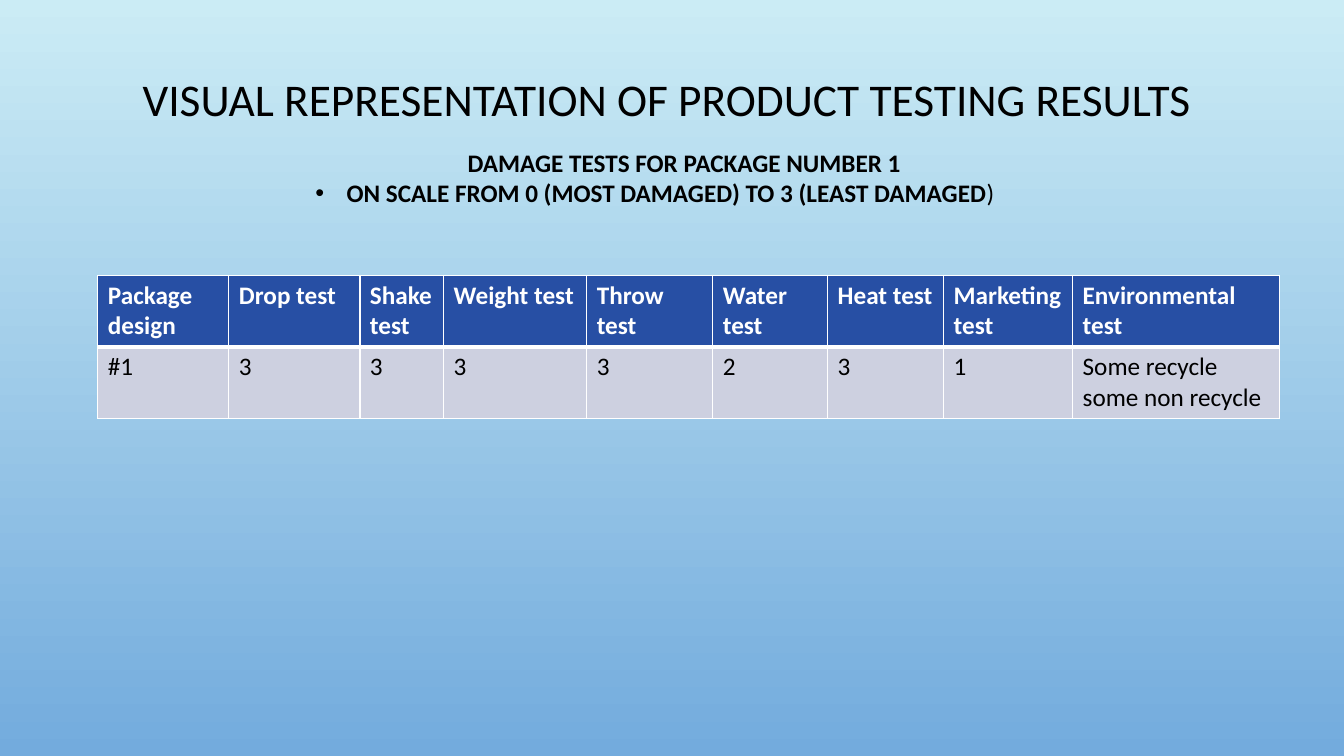
from dataclasses import dataclass

from lxml.etree import SubElement
from pptx import Presentation
from pptx.dml.color import RGBColor
from pptx.enum.text import MSO_ANCHOR as Anchor, MSO_AUTO_SIZE as AutoSize, PP_ALIGN as Align
from pptx.oxml.ns import qn
from pptx.util import Inches, Pt


@dataclass(frozen=True)
class Theme:
    font: str = "Calibri"
    ink: str = "000000"
    white: str = "FFFFFF"
    header: str = "274FA4"
    body: str = "CDD0E0"
    sky: tuple = ("CBECF5", "73ABDD")
    title_size: float = 32.4
    text_size: float = 18
    thin: float = 1
    thick: float = 3


def write(para, text, *, font, size, color, bold=False):
    span = para.add_run()
    span.text = text
    span.font.name = font
    span.font.size = Pt(size)
    span.font.bold = bold
    span.font.color.rgb = RGBColor.from_string(color)


def add_bullet(para, indent):
    properties = para._p.get_or_add_pPr()
    properties.set("marL", str(Inches(indent)))
    properties.set("indent", str(-Inches(indent)))
    SubElement(properties, qn("a:buFont")).set("typeface", "Arial")
    SubElement(properties, qn("a:buChar")).set("char", "•")


def add_border(cell, side, width, color):
    line = SubElement(cell._tc.get_or_add_tcPr(), qn(f"a:ln{side}"), w=str(Pt(width)))
    fill = SubElement(line, qn("a:solidFill"))
    SubElement(fill, qn("a:srgbClr")).set("val", color)


class SlideBuilder:
    """Draws styled elements on one slide, placed by percentages of its size."""

    def __init__(self, deck, theme):
        self.deck = deck
        self.theme = theme
        self.page = deck.slides.add_slide(deck.slide_layouts[5])

    def across(self, percent):
        return round(self.deck.slide_width * percent / 100)

    def down(self, percent):
        return round(self.deck.slide_height * percent / 100)

    def area(self, left, top, width, height):
        return self.across(left), self.down(top), self.across(width), self.down(height)

    def text(self, para, text, **style):
        defaults = dict(font=self.theme.font, size=self.theme.text_size, color=self.theme.ink)
        write(para, text, **(defaults | style))

    def background(self):
        fill = self.page.background.fill
        fill.gradient()
        fill.gradient_angle = 270
        for stop, color in zip(fill.gradient_stops, self.theme.sky):
            stop.color.rgb = RGBColor.from_string(color)

    def title(self, text, *area):
        box = self.page.shapes.title
        box.left, box.top, box.width, box.height = self.area(*area)
        frame = box.text_frame
        frame.auto_size = AutoSize.NONE
        frame.word_wrap = True
        frame.vertical_anchor = Anchor.TOP
        frame.margin_top = Inches(0.09)
        para = frame.paragraphs[0]
        para.alignment = Align.CENTER
        para.line_spacing = 0.9
        self.text(para, text, size=self.theme.title_size)

    def scale_note(self, heading, scale, closing, *area):
        frame = self.page.shapes.add_textbox(*self.area(*area)).text_frame
        frame.word_wrap = True
        frame.auto_size = AutoSize.SHAPE_TO_FIT_TEXT
        para = frame.paragraphs[0]
        para.alignment = Align.CENTER
        self.text(para, heading, bold=True)
        para = frame.add_paragraph()
        add_bullet(para, 0.31)
        self.text(para, scale, bold=True)
        self.text(para, closing)

    def table(self, rows, widths, left, top, row_height):
        area = self.area(left, top, sum(widths), row_height * len(rows))
        table = self.page.shapes.add_table(len(rows), len(widths), *area).table
        for column, width in zip(table.columns, widths):
            column.width = self.across(width)
        for row, texts in enumerate(rows):
            for column, text in enumerate(texts):
                self.cell(table.cell(row, column), text, row)

    def cell(self, cell, text, row):
        theme = self.theme
        header = row == 0
        for side in "LRTB":
            under_header = (side == "B" and header) or (side == "T" and row == 1)
            add_border(cell, side, theme.thick if under_header else theme.thin, theme.white)
        cell.fill.solid()
        cell.fill.fore_color.rgb = RGBColor.from_string(theme.header if header else theme.body)
        color = theme.white if header else theme.ink
        self.text(cell.text_frame.paragraphs[0], text, color=color, bold=header)


def main():
    deck = Presentation()
    deck.slide_width, deck.slide_height = Inches(13.33), Inches(7.5)
    slide = SlideBuilder(deck, Theme())
    slide.background()
    slide.title("VISUAL REPRESENTATION OF PRODUCT TESTING RESULTS ", 7.5, 9.07, 85, 15.47)
    results = [
        ["Package design", "Drop test", "Shake test", "Weight test", "Throw test",
         "Water test", "Heat test", "Marketing test", "Environmental test"],
        ["#1", "3", "3", "3", "3", "2", "3", "1", "Some recycle some non recycle"],
    ]
    widths = [9.75, 9.75, 6.23, 10.65, 9.38, 8.55, 8.63, 9.6, 15.38]
    slide.table(results, widths, 7.28, 36.4, 9.33)
    slide.scale_note("DAMAGE TESTS FOR PACKAGE NUMBER 1 ",
                     "ON SCALE FROM 0 (MOST DAMAGED) TO 3 (LEAST DAMAGED", ")",
                     22.73, 18.8, 56.79, 9.47)
    deck.save("out.pptx")


if __name__ == "__main__":
    main()
